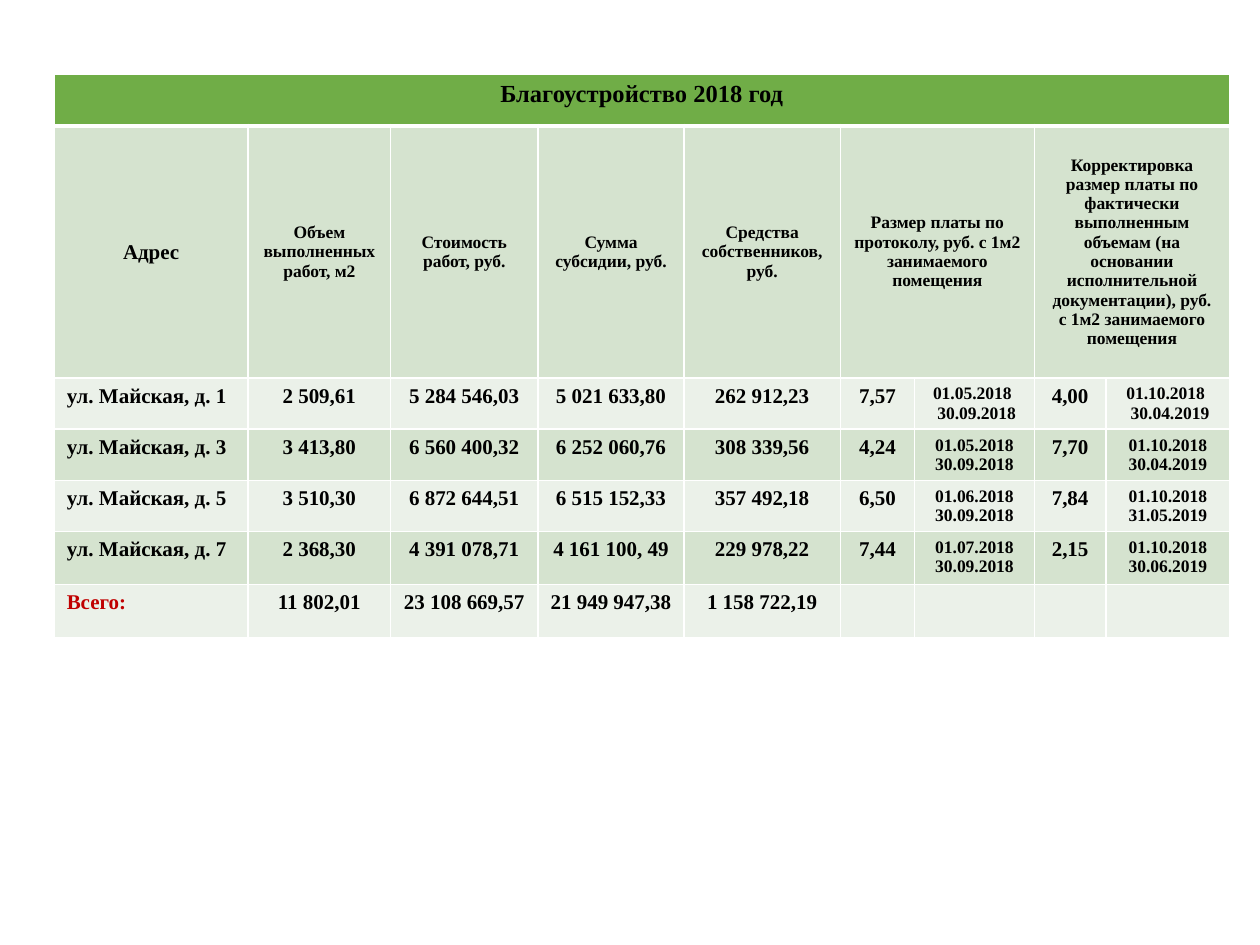
from lxml import etree
from pptx import Presentation
from pptx.dml.color import RGBColor
from pptx.enum.text import MSO_ANCHOR, PP_ALIGN
from pptx.oxml.ns import qn
from pptx.util import Inches, Pt

LEFT, CENTER = PP_ALIGN.LEFT, PP_ALIGN.CENTER
TOP, MIDDLE = MSO_ANCHOR.TOP, MSO_ANCHOR.MIDDLE
FONT = "Times New Roman"
COLORS = {
    "title": "70AD47",
    "dark_band": "D5E3CF",
    "light_band": "EBF1E9",
    "border": "FFFFFF",
    "text": "000000",
    "total": "C00000",
}

COLUMN_WIDTHS = [1.54, 1.13, 1.17, 1.16, 1.24, 0.59, 0.95, 0.57, 0.98]
ROW_HEIGHTS = [0.41, 2, 0.4, 0.38, 0.38, 0.42, 0.42]
DATE_COLUMNS = (6, 8)

TITLE = "Благоустройство 2018 год"
HEADERS = {
    0: "Адрес",
    1: "Объем выполненных работ, м2",
    2: "Стоимость работ, руб.",
    3: "Сумма субсидии, руб.",
    4: "Средства собственников, руб.",
    5: "Размер платы по протоколу, руб. с 1м2 занимаемого помещения",
    7: "Корректировка размер платы по фактически выполненным объемам "
       "(на основании исполнительной документации), руб. с 1м2 занимаемого помещения",
}
ROWS = [
    ["ул. Майская, д. 1", "2 509,61", "5 284 546,03", "5 021 633,80", "262 912,23",
     "7,57", "01.05.2018 \n 30.09.2018", "4,00", "01.10.2018 \n 30.04.2019"],
    ["ул. Майская, д. 3", "3 413,80", "6 560 400,32", "6 252 060,76", "308 339,56",
     "4,24", "01.05.2018\n30.09.2018", "7,70", "01.10.2018\n30.04.2019"],
    ["ул. Майская, д. 5", "3 510,30", "6 872 644,51", "6 515 152,33", "357 492,18",
     "6,50", "01.06.2018\n30.09.2018", "7,84", "01.10.2018\n31.05.2019"],
    ["ул. Майская, д. 7", "2 368,30", "4 391 078,71", "4 161 100, 49", "229 978,22",
     "7,44", "01.07.2018\n30.09.2018", "2,15", "01.10.2018\n30.06.2019"],
    ["Всего:", "11 802,01", "23 108 669,57", "21 949 947,38", "1 158 722,19",
     "", "", "", ""],
]


def write_text(cell, text, size=12, color="text", align=CENTER, anchor=TOP):
    cell.vertical_anchor = anchor
    cell.text_frame.text = text
    for paragraph in cell.text_frame.paragraphs:
        paragraph.alignment = align
        for run in paragraph.runs:
            run.font.name = FONT
            run.font.size = Pt(size)
            run.font.bold = True
            run.font.color.rgb = RGBColor.from_string(COLORS[color])


def style_cell(cell, fill, bottom_width=1, top_width=1):
    """Draw the four borders, then fill the cell."""
    properties = cell._tc.get_or_add_tcPr()
    widths = {"a:lnL": 1, "a:lnR": 1, "a:lnT": top_width, "a:lnB": bottom_width}
    for tag, width in widths.items():
        line = etree.SubElement(properties, qn(tag), w=str(Pt(width)))
        solid = etree.SubElement(line, qn("a:solidFill"))
        etree.SubElement(solid, qn("a:srgbClr"), val=COLORS["border"])
    cell.fill.solid()
    cell.fill.fore_color.rgb = RGBColor.from_string(COLORS[fill])


def fill_title_row(table):
    for cell in table.rows[0].cells:
        style_cell(cell, "title", bottom_width=3)
    table.cell(0, 0).merge(table.cell(0, len(COLUMN_WIDTHS) - 1))
    write_text(table.cell(0, 0), TITLE, size=14)


def fill_header_row(table):
    for cell in table.rows[1].cells:
        style_cell(cell, "dark_band", top_width=3)
    for column in (5, 7):
        table.cell(1, column).merge(table.cell(1, column + 1))
    for column, text in HEADERS.items():
        write_text(table.cell(1, column), text, size=10 if column else 12, anchor=MIDDLE)


def fill_data_rows(table):
    for index, values in enumerate(ROWS):
        band = "dark_band" if index % 2 else "light_band"
        for column, text in enumerate(values):
            cell = table.cell(index + 2, column)
            style_cell(cell, band)
            write_text(
                cell,
                text,
                size=10 if column in DATE_COLUMNS else 12,
                color="total" if text == "Всего:" else "text",
                align=CENTER if column else LEFT,
            )


def add_works_table(slide, left, top):
    width, height = sum(COLUMN_WIDTHS), sum(ROW_HEIGHTS)
    table = slide.shapes.add_table(
        len(ROW_HEIGHTS), len(COLUMN_WIDTHS),
        Inches(left), Inches(top), Inches(width), Inches(height),
    ).table
    for column, column_width in zip(table.columns, COLUMN_WIDTHS):
        column.width = Inches(column_width)
    for row, row_height in zip(table.rows, ROW_HEIGHTS):
        row.height = Inches(row_height)
    fill_title_row(table)
    fill_header_row(table)
    fill_data_rows(table)


def main():
    presentation = Presentation()
    presentation.slide_width = Inches(10)
    presentation.slide_height = Inches(7.5)
    slide = presentation.slides.add_slide(presentation.slide_layouts[6])
    add_works_table(slide, left=0.43, top=0.59)
    presentation.save("out.pptx")


if __name__ == "__main__":
    main()
